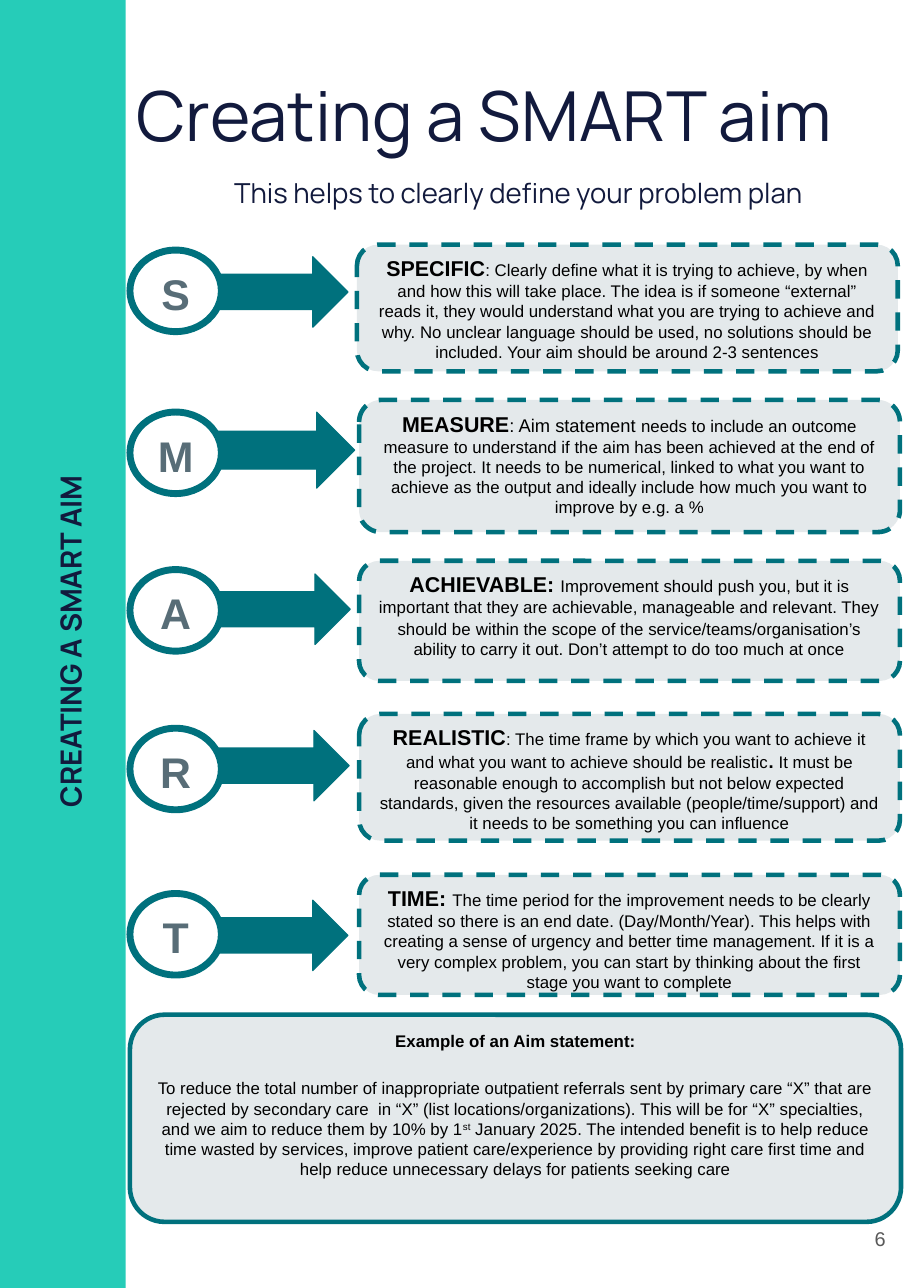
from pptx import Presentation
from pptx.dml.color import RGBColor
from pptx.enum.dml import MSO_LINE
from pptx.enum.shapes import MSO_SHAPE
from pptx.enum.text import MSO_ANCHOR, MSO_AUTO_SIZE, PP_ALIGN
from pptx.util import Inches, Pt

RECT, OVAL = MSO_SHAPE.RECTANGLE, MSO_SHAPE.OVAL
ARROW, CARD = MSO_SHAPE.RIGHT_ARROW, MSO_SHAPE.ROUNDED_RECTANGLE
LEFT, CENTER, RIGHT = PP_ALIGN.LEFT, PP_ALIGN.CENTER, PP_ALIGN.RIGHT
TOP, MIDDLE = MSO_ANCHOR.TOP, MSO_ANCHOR.MIDDLE

WIDTH, HEIGHT = 8.27, 11.69
MARGIN = 1.18          # left edge of badges and example
BADGE_W, BADGE_H = 0.83, 0.74
ARROW_W, CARD_W = 1.3, 4.91
TURQUOISE, TEAL, PALE = "26CCB8", "00717D", "E4E9EB"
NAVY, SLATE, GREY, BLACK, WHITE = "121A3D", "586D77", "595959", "000000", "FFFFFF"

# Badge top, arrow (left, top, height), card (left, top, height), heading, runs (text, size, bold)
STEPS = [
    (2.27, (1.86, 2.33, 0.64), (3.24, 2.22, 1.15), "SPECIFIC", [
        (": Clearly define what it is trying to achieve, by when and how this will take "
         "place. The idea is if someone “external” reads it, they would understand what "
         "you are trying to achieve and why. No unclear language should be used, no "
         "solutions should be included. Your aim should be around 2-3 sentences", 11, False)]),
    (3.74, (1.92, 3.74, 0.69), (3.26, 3.63, 1.2), "MEASURE", [
        (": Aim statement ", 12, False),
        ("needs to include an outcome measure to understand if the aim has been achieved "
         "at the end of the project. It needs to be numerical, linked to what you want to "
         "achieve as the output and ideally include how much you want to improve by "
         "e.g. a %", 11, False)]),
    (5.17, (1.88, 5.21, 0.64), (3.26, 5.09, 1.09), "ACHIEVABLE: ", [
        ("Improvement should push you, but it is important that they are achievable, "
         "manageable and relevant. They should be", 11, False),
        (" ", 12, True),
        ("within the scope of the service/teams/organisation’s ability to carry it out. "
         "Don’t attempt to do too much at once", 11, False)]),
    (6.61, (1.87, 6.63, 0.64), (3.26, 6.48, 1.15), "REALISTIC", [
        (": The time frame by which you want to achieve it and what you want to achieve "
         "should be realistic", 11, False),
        (". ", 12, True),
        ("It must be reasonable enough to accomplish but not below expected standards, "
         "given the resources available (people/time/support) and it needs to be "
         "something you can influence", 11, False)]),
    (8.11, (1.86, 8.17, 0.64), (3.26, 7.94, 1.09), "TIME: ", [
        ("The time period for the improvement needs to be clearly stated so there is an "
         "end date. (Day/Month/Year). This helps with creating a sense of urgency and "
         "better time management. If it is a very complex problem, you can start by "
         "thinking about the first stage you want to complete", 11, False)]),
]

EXAMPLE_START = (
    "To reduce the total number of inappropriate outpatient referrals sent by primary "
    "care “X” that are rejected by secondary care  in “X” (list locations/organizations). "
    "This will be for “X” specialties, and we aim to reduce them by 10% by 1")
EXAMPLE_END = (
    " January 2025. The intended benefit is to help reduce time wasted by services, "
    "improve patient care/experience by providing right care first time and help reduce "
    "unnecessary delays for patients seeking care")


def rgb(color):
    return RGBColor.from_string(color)


def place(sp, left, top, width, height):
    sp.left, sp.top = Inches(left), Inches(top)
    sp.width, sp.height = Inches(width), Inches(height)


def frame(sp, inset_x=0.1, inset_y=0.05, anchor=TOP):
    tf = sp.text_frame
    tf.word_wrap, tf.auto_size, tf.vertical_anchor = True, MSO_AUTO_SIZE.NONE, anchor
    tf.margin_left = tf.margin_right = Inches(inset_x)
    tf.margin_top = tf.margin_bottom = Inches(inset_y)
    return tf


def format_paragraph(p, align=CENTER, spacing=1.0, before=0):
    p.alignment, p.line_spacing, p.space_before = align, spacing, Pt(before)
    return p


def add_run(p, text, size, color=BLACK, bold=False, font="Arial"):
    r = p.add_run()
    r.text = text
    r.font.name, r.font.size, r.font.bold = font, Pt(size), bold
    r.font.color.rgb = rgb(color)
    return r


def add_shape(s, kind, box, fill, line=None, weight=0.75):
    sp = s.shapes.add_shape(kind, *map(Inches, box))
    sp.shadow.inherit = False
    sp.fill.solid()
    sp.fill.fore_color.rgb = rgb(fill)
    if line:
        sp.line.color.rgb = rgb(line)
        sp.line.width = Pt(weight)
    else:
        sp.line.fill.background()
    return sp


def add_label(s, box, text, size, color, align=CENTER, bold=False, font="Arial", inset=0.1):
    sp = s.shapes.add_textbox(*map(Inches, box))
    p = format_paragraph(frame(sp, inset, inset, MIDDLE).paragraphs[0], align)
    add_run(p, text, size, color, bold, font)
    return sp


def add_title(s):
    title = s.shapes.title
    place(title, 1.14, 0.56, 7.13, 1.45)
    tf = frame(title, inset_y=0.1)
    p = format_paragraph(tf.paragraphs[0], LEFT)
    add_run(p, "Creating a SMART aim", 45, NAVY, font="Manrope")
    p = format_paragraph(tf.add_paragraph(), spacing=1.15, before=10)
    add_run(p, "This helps to clearly define your problem plan", 18, NAVY, font="Manrope")


def add_step(s, badge_top, arrow, card, heading, runs):
    # Arrow, tucked behind the badge
    left, top, height = arrow
    add_shape(s, ARROW, (left, top, ARROW_W, height), TEAL, TEAL)

    # Badge with the initial
    badge = add_shape(s, OVAL, (MARGIN, badge_top, BADGE_W, BADGE_H), WHITE, TEAL, 4.5)
    add_run(format_paragraph(frame(badge).paragraphs[0]), heading[0], 28, SLATE, True)

    # Dashed explanation card
    left, top, height = card
    sp = add_shape(s, CARD, (left, top, CARD_W, height), PALE, TEAL, 3)
    sp.line.dash_style = MSO_LINE.DASH
    p = format_paragraph(frame(sp, 0.12, 0.04).paragraphs[0])
    add_run(p, heading, 14, bold=True)
    for text, size, bold in runs:
        add_run(p, text, size, bold=bold)


def add_example(s):
    sp = add_shape(s, CARD, (MARGIN, 9.21, 7, 1.88), PALE, TEAL, 3)
    tf = frame(sp)
    add_run(format_paragraph(tf.paragraphs[0]), "Example of an Aim statement:", 11, bold=True)
    p = format_paragraph(tf.add_paragraph(), before=18)
    add_run(p, EXAMPLE_START, 11)
    ordinal = add_run(p, "st", 11)
    ordinal.font._element.set("baseline", "30000")
    add_run(p, EXAMPLE_END, 11)


def main():
    prs = Presentation()
    prs.slide_width, prs.slide_height = Inches(WIDTH), Inches(HEIGHT)
    s = prs.slides.add_slide(prs.slide_layouts[5])

    # Side band and its vertical label
    add_shape(s, RECT, (-0.04, 0, 1.18, HEIGHT), TURQUOISE)
    band_label = add_label(s, (-4.63, 5.56, 10.53, 0.52), "CREATING A SMART AIM",
                           19, NAVY, bold=True, font="Manrope")
    band_label.rotation = 270

    # Content
    add_title(s)
    for step in STEPS:
        add_step(s, *step)
    add_example(s)

    # Page number
    add_label(s, (7.67, 10.8, 0.5, 0.89), "6", 13, GREY, RIGHT, inset=0.13)

    prs.save("out.pptx")


if __name__ == "__main__":
    main()
